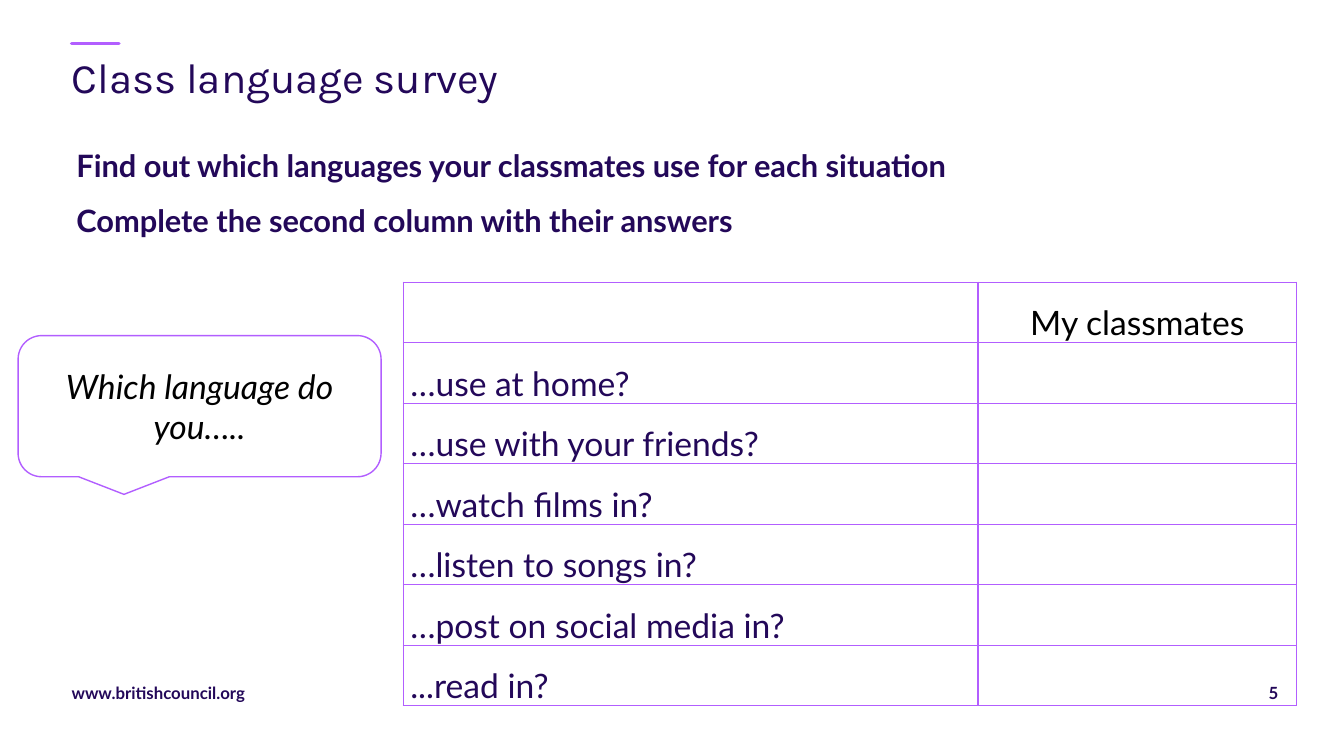
"""Build the class language survey slide."""
from lxml.etree import SubElement
from pptx import Presentation
from pptx.dml.color import RGBColor
from pptx.enum.shapes import MSO_CONNECTOR, MSO_SHAPE
from pptx.enum.text import MSO_ANCHOR as Anchor, MSO_AUTO_SIZE as AutoSize, PP_ALIGN as Align
from pptx.oxml.ns import qn
from pptx.util import Pt

PX = 9144
NAVY = RGBColor(0x23, 0x08, 0x59)
VIOLET = RGBColor(0xB2, 0x5E, 0xFF)
BLACK = RGBColor(0, 0, 0)
WHITE = RGBColor(0xFF, 0xFF, 0xFF)


def px(*lengths):
    return [length * PX for length in lengths]


def write(frame, lines, size, color=NAVY, font="Lato", bold=False, italic=False,
          align=Align.LEFT, anchor=Anchor.TOP, spacing=None, margins=None):
    frame.word_wrap = True
    frame.vertical_anchor = anchor
    if margins is not None:
        frame.margin_left = frame.margin_right = margins * PX
        frame.margin_top = frame.margin_bottom = 0
    for index, line in enumerate(lines):
        para = frame.add_paragraph() if index else frame.paragraphs[0]
        para.alignment = align
        para.line_spacing = spacing
        span = para.add_run()
        span.text = line
        span.font.name = font
        span.font.size = Pt(size)
        span.font.bold = bold
        span.font.italic = italic
        span.font.color.rgb = color


deck = Presentation()
deck.slide_width, deck.slide_height = px(1333, 750)
page = deck.slides.add_slide(deck.slide_layouts[5])
shapes = page.shapes

title = shapes.title
title.left, title.top, title.width, title.height = px(71, 55, 1197, 87)
write(title.text_frame, ["Class language survey"], 30, font="Karla",
      spacing=Pt(33), margins=0)
title.text_frame.auto_size = AutoSize.NONE

accent = shapes.add_connector(MSO_CONNECTOR.STRAIGHT, *px(71, 43, 118, 43))
accent.line.color.rgb = VIOLET
accent.line.width = Pt(2.4)
accent.line._get_or_add_ln().set("cap", "rnd")
SubElement(accent._element.spPr, qn("a:effectLst"))

for left, width, text, align in [
    (71, 752, "www.britishcouncil.org", Align.LEFT),
    (1213, 55, "5", Align.RIGHT),
]:
    footer = shapes.add_textbox(*px(left, 677, width, 20))
    write(footer.text_frame, [text], 12, bold=True, align=align,
          anchor=Anchor.BOTTOM, margins=0)

situations = [
    "…use at home?",
    "…use with your friends?",
    "…watch films in?",
    "…listen to songs in?",
    "…post on social media in?",
    "...read in?",
]
survey = shapes.add_table(len(situations) + 1, 2, *px(400, 280, 886, 405)).table
survey.first_row = False
survey.horz_banding = False
survey.columns[0].width, survey.columns[1].width = px(570, 316)
for index, row in enumerate(survey.rows):
    row.height = (58 if index else 57) * PX

for cell in survey.iter_cells():
    cell.margin_left = cell.margin_right = 7 * PX
    cell.margin_top = cell.margin_bottom = 0
    cell.vertical_anchor = Anchor.MIDDLE
    properties = cell._tc.get_or_add_tcPr()
    for side in ("a:lnL", "a:lnR", "a:lnT", "a:lnB"):
        border = SubElement(properties, qn(side), w=str(Pt(1)))
        SubElement(SubElement(border, qn("a:solidFill")), qn("a:srgbClr"), val=str(VIOLET))
    cell.fill.background()

write(survey.cell(0, 1).text_frame, ["My classmates"], 24, BLACK,
      align=Align.CENTER, anchor=Anchor.MIDDLE, spacing=1.5, margins=7)
for index, situation in enumerate(situations, 1):
    write(survey.cell(index, 0).text_frame, [situation], 24,
          anchor=Anchor.MIDDLE, spacing=1.5, margins=7)

instructions = shapes.add_textbox(*px(66, 122, 1009, 114))
write(instructions.text_frame, [
    "Find out which languages your classmates use for each situation",
    "Complete the second column with their answers",
], 22, bold=True, spacing=1.5)
instructions.text_frame.auto_size = AutoSize.SHAPE_TO_FIT_TEXT

bubble = shapes.add_shape(MSO_SHAPE.ROUNDED_RECTANGULAR_CALLOUT, *px(18, 333, 360, 140))
bubble.shadow.inherit = False
bubble.fill.solid()
bubble.fill.fore_color.rgb = WHITE
bubble.line.color.rgb = VIOLET
bubble.line.width = Pt(1)
write(bubble.text_frame, ["Which language do you….."], 24, BLACK, italic=True,
      align=Align.CENTER, anchor=Anchor.MIDDLE)

deck.save("out.pptx")
